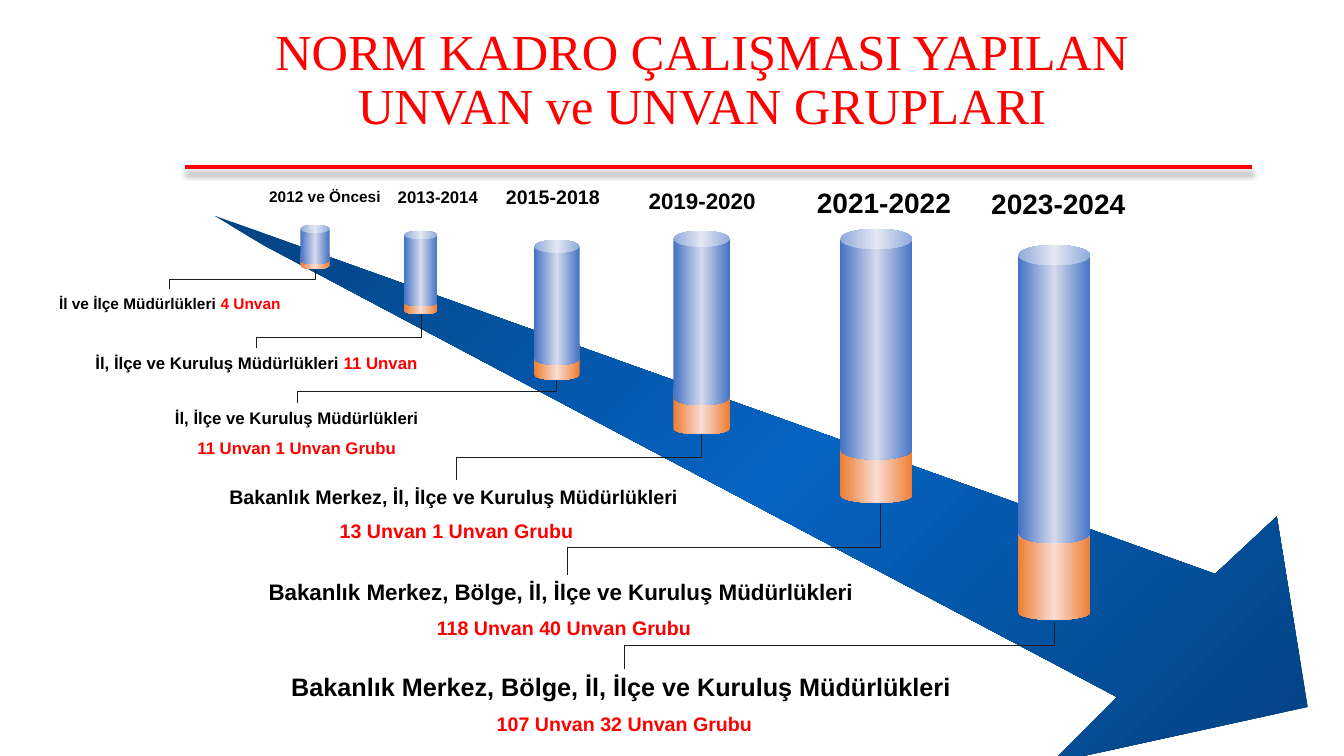
from copy import deepcopy
from typing import NamedTuple

from lxml.etree import SubElement
from pptx import Presentation
from pptx.dml.color import RGBColor
from pptx.enum.shapes import MSO_CONNECTOR as Connector, MSO_SHAPE as Preset
from pptx.enum.text import MSO_ANCHOR as Anchor, PP_ALIGN as Align
from pptx.oxml.ns import qn
from pptx.util import Pt

COLORS = {
    "red": "FF0000", "black": "000000", "leader": "1C1C1C",
    "navy": "034282", "blue": "0563C1",
    "orange": "ED7D31", "pale_orange": "F9DCD4",
    "steel": "4472C4", "pale_steel": "D5DAEC",
}


class Box(NamedTuple):
    left: float
    top: float
    width: float
    height: float


class Run(NamedTuple):
    text: str
    size: float
    color: str = "black"


class Can(NamedTuple):
    top: float
    height: float
    rim: float


class Leader(NamedTuple):
    start_x: float
    start_y: float
    end_x: float
    end_y: float
    bend: float = 0.5


class Period(NamedTuple):
    year: Run
    year_box: Box
    lines: list[list[Run]]
    lines_box: Box
    left: float
    width: float
    orange: Can
    blue: Can
    leader: Leader


STAFF = "İl, İlçe ve Kuruluş Müdürlükleri"
PERIODS = [
    Period(Run("2012 ve Öncesi", 11), Box(185, 130.3, 94.3, 20.9),
           [[Run("İl ve İlçe Müdürlükleri ", 11), Run("4 Unvan", 11, "red")]],
           Box(33.1, 206.6, 176.4, 20.9), 214.6, 20.9,
           Can(178.6, 13.7, 0.4), Can(160.6, 28.1, 0.27),
           Leader(225.4, 192.2, 121, 206.6)),
    Period(Run("2013-2014", 12), Box(274.3, 129.6, 77, 21.6),
           [[Run(f"{STAFF} ", 12), Run("11 Unvan", 12, "red")]],
           Box(54.7, 248.4, 257, 21.6), 288.7, 23.8,
           Can(205.9, 18.7, 0.27), Can(164.9, 54, 0.24),
           Leader(301, 224.6, 182.9, 248.4, 0.7)),
    Period(Run("2015-2018", 14), Box(347.8, 128.9, 94.3, 24.5),
           [[Run(STAFF, 12)], [Run("11 Unvan 1 Unvan Grubu", 12, "red")]],
           Box(83.5, 288, 257, 43.9), 381.6, 32.4,
           Can(241.9, 29.5, 0.25), Can(171.4, 89.3, 0.28),
           Leader(397.4, 271.4, 212.4, 288)),
    Period(Run("2019-2020", 16), Box(445.7, 130.3, 111.6, 26.6),
           [[Run(f"Bakanlık Merkez, {STAFF} ", 14)],
            [Run("13 Unvan 1 Unvan Grubu", 14, "red")]],
           Box(134.6, 342.7, 383, 49.7), 481, 40.3,
           Can(274.3, 36, 0.22), Can(164.9, 124.6, 0.28),
           Leader(501.1, 310.3, 326.2, 342.7)),
    Period(Run("2021-2022", 20), Box(571.7, 128.9, 119.5, 31.7),
           [[Run(f"Bakanlık Merkez, Bölge, {STAFF} ", 16)],
            [Run("118 Unvan 40 Unvan Grubu", 14, "red")]],
           Box(153.4, 409.7, 499, 51.8), 600.1, 51.8,
           Can(293, 66.2, 0.21), Can(163.4, 164.9, 0.28),
           Leader(628.6, 360, 405.4, 410.4, 0.62)),
    Period(Run("2023-2024", 20), Box(696.2, 129.6, 119.5, 31.7),
           [[Run(f"Bakanlık Merkez, Bölge, {STAFF} ", 18)],
            [Run("107 Unvan 32 Unvan Grubu", 14, "red")]],
           Box(196.6, 475.9, 499, 54.7), 727.2, 51.8,
           Can(376.6, 66.2, 0.21), Can(175, 213.1, 0.28),
           Leader(753.1, 444.2, 446.4, 478.1)),
]
ARROW = [(228.2, 180.7), (153.4, 154.1), (187.9, 175), (797.8, 498.2),
         (751, 545), (933.8, 505.4), (911.5, 369.4), (867.6, 410.4)]


def rgb(name: str) -> RGBColor:
    return RGBColor.from_string(COLORS[name])


def apply(target: object, values: dict) -> None:
    for name, value in values.items():
        setattr(target, name, value)


def paint(shape, edge: str, middle: str, angle: float) -> None:
    """Fill with a symmetric three-stop gradient and no outline."""
    shape.shadow.inherit = False
    shape.line.fill.background()
    shape.fill.gradient()
    shape.fill.gradient_angle = angle
    stops = shape._element.spPr.find(f".//{qn('a:gsLst')}")
    stops.append(deepcopy(stops[0]))
    for stop, color, position in zip(shape.fill.gradient_stops,
                                     (edge, middle, edge), (0, 0.5, 1)):
        stop.color.rgb = rgb(color)
        stop.position = position


def add_can(slide, period: Period, can: Can, edge: str, middle: str) -> None:
    shape = slide.shapes.add_shape(Preset.CAN, Pt(period.left), Pt(can.top),
                                   Pt(period.width), Pt(can.height))
    shape.adjustments[0] = can.rim
    paint(shape, edge, middle, 0)


def add_text(slide, box: Box, lines: list[list[Run]]) -> None:
    frame = slide.shapes.add_textbox(*map(Pt, box)).text_frame
    apply(frame, {"word_wrap": True, "margin_left": 0, "margin_right": 0})
    for index, runs in enumerate(lines):
        paragraph = frame.add_paragraph() if index else frame.paragraphs[0]
        paragraph.alignment = Align.CENTER
        if index:
            paragraph.space_before = Pt(0.55 * runs[0].size)
        for item in runs:
            run = paragraph.add_run()
            run.text = item.text
            apply(run.font, {"name": "Arial", "size": Pt(item.size), "bold": True})
            run.font.color.rgb = rgb(item.color)


def add_line(slide, kind, ends: tuple, color: str, width: float):
    connector = slide.shapes.add_connector(kind, *map(Pt, ends))
    connector.line.color.rgb = rgb(color)
    connector.line.width = Pt(width)
    return connector, SubElement(connector._element.spPr, qn("a:effectLst"))


def add_leader(slide, leader: Leader) -> None:
    """Draw a down-left elbow as a horizontal one turned by 90 degrees."""
    across = leader.start_x - leader.end_x
    down = leader.end_y - leader.start_y
    left = (leader.start_x + leader.end_x - down) / 2
    top = (leader.start_y + leader.end_y - across) / 2
    connector, _ = add_line(slide, Connector.ELBOW,
                            (left, top, left + down, top + across), "leader", 0.75)
    properties = connector._element.spPr
    properties.find(qn("a:xfrm")).set("rot", "5400000")
    guides = properties.find(f".//{qn('a:avLst')}")
    SubElement(guides, qn("a:gd"), name="adj1", fmla=f"val {round(leader.bend * 100000)}")


def add_title(slide) -> None:
    frame = slide.shapes.add_textbox(Pt(165.6), Pt(-1.4), Pt(671.8), Pt(118.8)).text_frame
    apply(frame, {"word_wrap": True, "vertical_anchor": Anchor.MIDDLE})
    paragraph = frame.paragraphs[0]
    paragraph.text = "NORM KADRO ÇALIŞMASI YAPILAN\vUNVAN ve UNVAN GRUPLARI"
    apply(paragraph, {"alignment": Align.CENTER, "line_spacing": 0.9})
    for run in paragraph.runs:
        apply(run.font, {"name": "Times New Roman", "size": Pt(36)})
        run.font.color.rgb = rgb("red")


def add_rule(slide) -> None:
    _, effects = add_line(slide, Connector.STRAIGHT, (894.2, 119.5, 132.5, 119.5), "red", 3)
    shadow = SubElement(effects, qn("a:outerShdw"), blurRad=str(Pt(4)),
                        dist=str(Pt(4)), dir="5400000", rotWithShape="0")
    shade = SubElement(shadow, qn("a:srgbClr"), val=COLORS["black"])
    SubElement(shade, qn("a:alpha"), val="25000")


def main() -> None:
    presentation = Presentation()
    apply(presentation, {"slide_width": Pt(960), "slide_height": Pt(540)})
    slide = presentation.slides.add_slide(presentation.slide_layouts[6])

    # Heading and the arrow behind the columns
    add_rule(slide)
    builder = slide.shapes.build_freeform(*ARROW[0], scale=float(Pt(1)))
    builder.add_line_segments(ARROW[1:], close=True)
    paint(builder.convert_to_shape(), "navy", "blue", 315)
    add_title(slide)

    # One column, with its labels and leader, per period
    for period in PERIODS:
        add_can(slide, period, period.orange, "orange", "pale_orange")
        add_can(slide, period, period.blue, "steel", "pale_steel")
        add_leader(slide, period.leader)
        add_text(slide, period.year_box, [[period.year]])
        add_text(slide, period.lines_box, period.lines)

    presentation.save("out.pptx")


if __name__ == "__main__":
    main()
